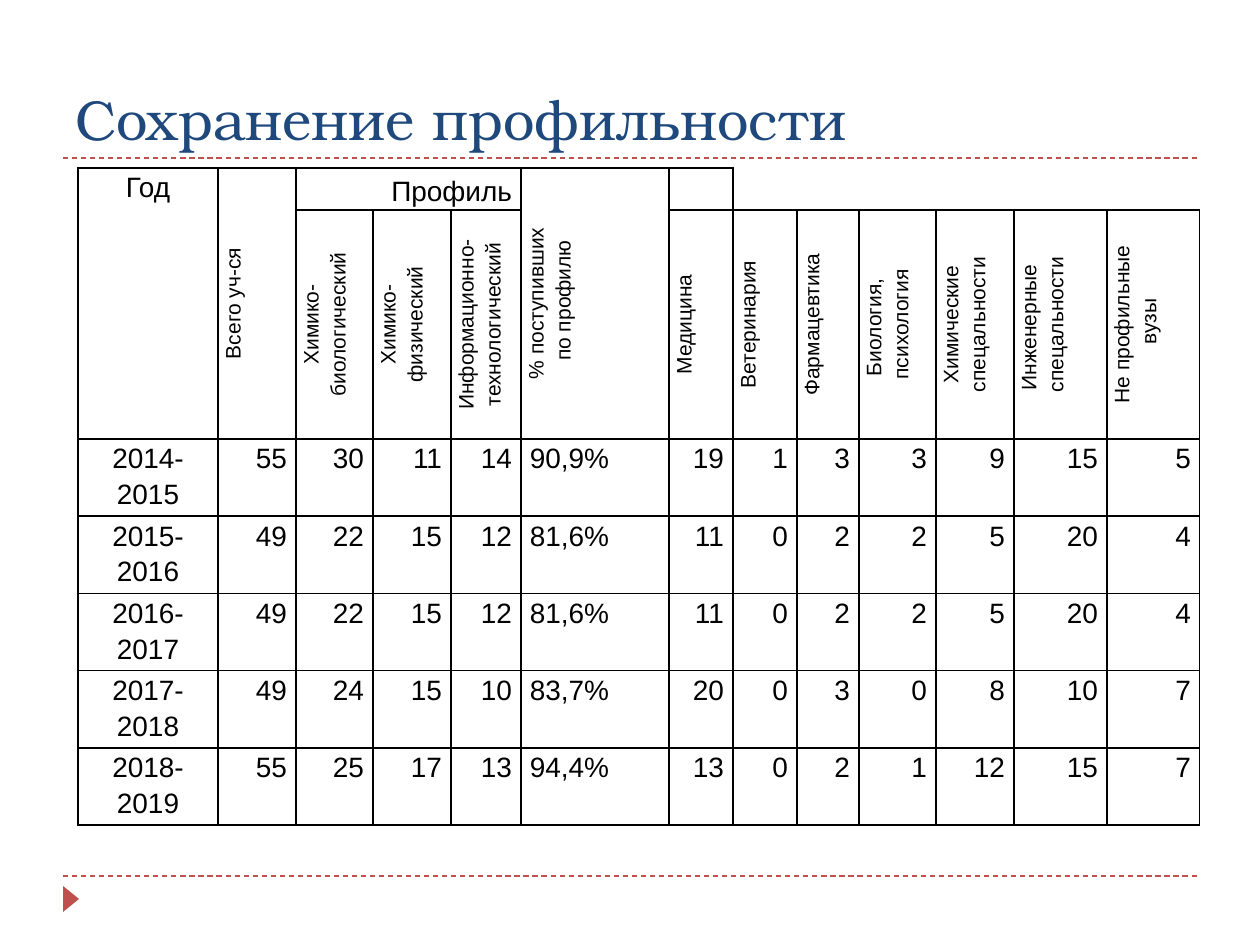
from lxml import etree
from pptx import Presentation
from pptx.dml.color import RGBColor
from pptx.enum.dml import MSO_LINE
from pptx.enum.shapes import MSO_CONNECTOR, MSO_SHAPE
from pptx.enum.text import MSO_ANCHOR, PP_ALIGN
from pptx.oxml.ns import qn
from pptx.util import Emu, Pt

LEFT, CENTER, RIGHT = PP_ALIGN.LEFT, PP_ALIGN.CENTER, PP_ALIGN.RIGHT
TOP, MIDDLE, BOTTOM = MSO_ANCHOR.TOP, MSO_ANCHOR.MIDDLE, MSO_ANCHOR.BOTTOM
DASH = MSO_LINE.DASH
STRAIGHT = MSO_CONNECTOR.STRAIGHT
TRIANGLE = MSO_SHAPE.ISOSCELES_TRIANGLE

BLACK = RGBColor(0x00, 0x00, 0x00)
NAVY = RGBColor(0x1F, 0x49, 0x7D)
RED = RGBColor(0xC0, 0x50, 0x4D)

TITLE = "Сохранение профильности"
TITLE_BOX = (63, 32, 1134, 126)
RULE_TOPS = (158, 876)
RULE_LEFT, RULE_RIGHT = 63, 1197
MARKER_BOX = (58, 891, 26, 16)

TABLE_LEFT, TABLE_TOP = 78, 168
COLUMN_WIDTHS = (140, 78, 77, 78, 70, 148, 64, 64, 62, 77, 78, 93, 93)
ROW_HEIGHTS = (42, 229) + (69,) * 5
MERGES = [(0, 0, 1, 0), (0, 1, 1, 1), (0, 2, 0, 4), (0, 5, 1, 5), (0, 7, 0, 12)]
OPEN_COLUMN = 7
RATE_COLUMN = 5

VERTICAL_HEADERS = {
    (0, 1): "Всего уч-ся",
    (0, 5): "% поступивших\n по профилю",
    (1, 2): "Химико-\nбиологический",
    (1, 3): "Химико-\nфизический",
    (1, 4): "Информационно-\nтехнологический",
    (1, 6): "Медицина",
    (1, 7): "Ветеринария",
    (1, 8): "Фармацевтика",
    (1, 9): "Биология, \nпсихология",
    (1, 10): "Химические\nспецальности",
    (1, 11): "Инженерные \nспецальности",
    (1, 12): "Не профильные\n вузы",
}
YEARS = [
    ("2014-\n2015", 55, 30, 11, 14, "90,9%", 19, 1, 3, 3, 9, 15, 5),
    ("2015-\n2016", 49, 22, 15, 12, "81,6%", 11, 0, 2, 2, 5, 20, 4),
    ("2016-\n2017", 49, 22, 15, 12, "81,6%", 11, 0, 2, 2, 5, 20, 4),
    ("2017-\n2018", 49, 24, 15, 10, "83,7%", 20, 0, 3, 0, 8, 10, 7),
    ("2018-\n2019", 55, 25, 17, 13, "94,4%", 13, 0, 2, 1, 12, 15, 7),
]


def px(value):
    return Emu(round(value * 914400 / 126))


def set_values(target, values):
    for name, value in values.items():
        setattr(target, name, value)


def write_text(frame, text, size, font="Arial", color=BLACK, align=LEFT, spacing=1.15):
    frame.text = text
    for paragraph in frame.paragraphs:
        set_values(paragraph, {"alignment": align, "line_spacing": spacing})
        set_values(paragraph.runs[0].font, {"size": Pt(size), "name": font})
        paragraph.runs[0].font.color.rgb = color


def set_borders(cell, sides):
    properties = cell._tc.get_or_add_tcPr()
    for position, side in enumerate("LRTB"):
        line = etree.Element(qn(f"a:ln{side}"), w=str(Pt(1)))
        if side in sides:
            fill = etree.SubElement(line, qn("a:solidFill"))
            etree.SubElement(fill, qn("a:srgbClr"), val=str(BLACK))
        else:
            etree.SubElement(line, qn("a:noFill"))
        properties.insert(position, line)


def border_sides(row, column):
    if row > 0 or column < OPEN_COLUMN:
        return "LRTB"
    return "LB" if column == OPEN_COLUMN else "B"


def add_title(slide):
    frame = slide.shapes.add_textbox(*map(px, TITLE_BOX)).text_frame
    set_values(frame, {"word_wrap": True, "vertical_anchor": BOTTOM})
    write_text(frame, TITLE, 32, "TeX Gyre Bonum", NAVY, spacing=1.0)


def add_decoration(slide):
    for top in RULE_TOPS:
        rule = slide.shapes.add_connector(
            STRAIGHT, px(RULE_LEFT), px(top), px(RULE_RIGHT), px(top))
        rule.line.color.rgb = RED
        set_values(rule.line, {"width": Pt(0.75), "dash_style": DASH})
        etree.SubElement(rule._element.spPr, qn("a:effectLst"))
    marker = slide.shapes.add_shape(TRIANGLE, *map(px, MARKER_BOX))
    marker.rotation = 90
    marker.shadow.inherit = False
    marker.fill.solid()
    marker.fill.fore_color.rgb = RED
    marker.line.fill.background()


def add_profile_table(slide):
    table = slide.shapes.add_table(
        len(ROW_HEIGHTS), len(COLUMN_WIDTHS), px(TABLE_LEFT), px(TABLE_TOP),
        px(sum(COLUMN_WIDTHS)), px(sum(ROW_HEIGHTS))).table
    set_values(table, {"first_row": False, "horz_banding": False})
    for column, width in zip(table.columns, COLUMN_WIDTHS):
        column.width = px(width)
    for row, height in zip(table.rows, ROW_HEIGHTS):
        row.height = px(height)

    margins = {"margin_left": px(9), "margin_right": px(9),
               "margin_top": 0, "margin_bottom": 0}
    for row in range(len(ROW_HEIGHTS)):
        for column in range(len(COLUMN_WIDTHS)):
            cell = table.cell(row, column)
            set_values(cell, margins)
            cell.fill.background()
            set_borders(cell, border_sides(row, column))
    for top, left, bottom, right in MERGES:
        table.cell(top, left).merge(table.cell(bottom, right))

    write_text(table.cell(0, 0).text_frame, "Год", 16, align=CENTER)
    profile = table.cell(0, 2)
    write_text(profile.text_frame, "Профиль", 16, align=RIGHT)
    profile.vertical_anchor = MIDDLE
    for position, text in VERTICAL_HEADERS.items():
        cell = table.cell(*position)
        write_text(cell.text_frame, text, 12, align=CENTER)
        cell.vertical_anchor = MIDDLE
        cell._tc.get_or_add_tcPr().set("vert", "vert270")

    alignments = {0: CENTER, RATE_COLUMN: LEFT}
    for row, values in enumerate(YEARS, start=2):
        for column, value in enumerate(values):
            cell = table.cell(row, column)
            cell.vertical_anchor = TOP
            write_text(cell.text_frame, str(value), 16,
                       align=alignments.get(column, RIGHT))


def main():
    """Build the slide on how many students stay with their study profile."""
    presentation = Presentation()
    set_values(presentation, {"slide_width": px(1260), "slide_height": px(945)})
    slide = presentation.slides.add_slide(presentation.slide_layouts[6])
    add_decoration(slide)
    add_title(slide)
    add_profile_table(slide)
    presentation.save("out.pptx")


if __name__ == "__main__":
    main()
